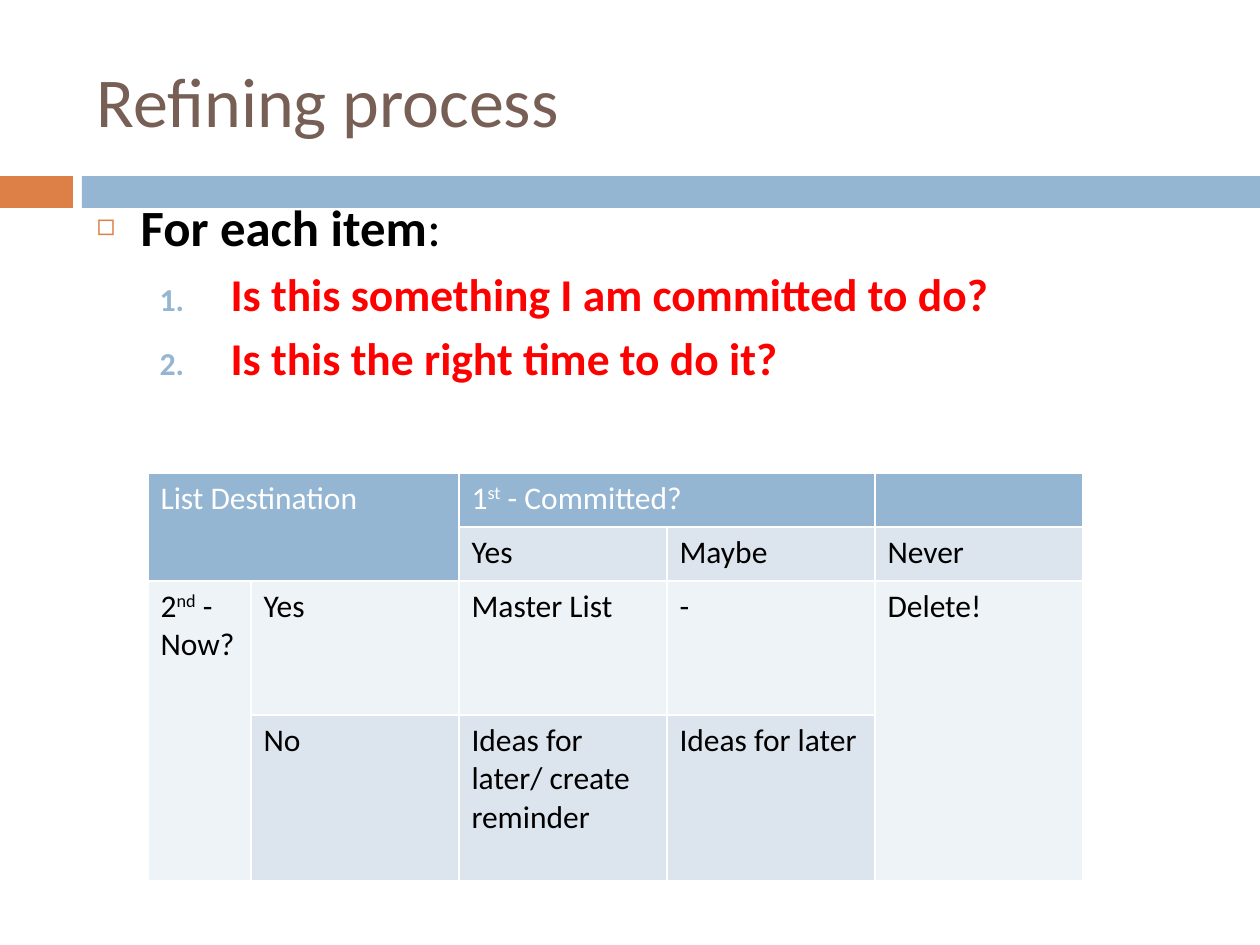
import pptx
import pptx.util
import pptx.dml.color
import pptx.enum.shapes
import pptx.enum.text
import pptx.oxml
import pptx.oxml.ns

Pt = pptx.util.Pt
Color = pptx.dml.color.RGBColor
FONT = "Calibri"
BROWN = Color(0x77, 0x5F, 0x55)
ORANGE = Color(0xDD, 0x80, 0x47)
BLUE = Color(0x94, 0xB6, 0xD2)
DARK = Color(0xDC, 0xE5, 0xEE)
PALE = Color(0xEE, 0xF3, 0xF7)
RED = Color(0xFF, 0, 0)
BLACK = Color(0, 0, 0)
WHITE = Color(0xFF, 0xFF, 0xFF)

TITLE = "Refining process"
LEAD = ("For each item", ":")
ASKS = ["Is this something I am committed to do?",
        "Is this the right time to do it?"]
BARS = [((0, 176, 73, 32), ORANGE), ((82, 176, 1178, 32), BLUE)]

# A cell is a list of runs; a leading ^ raises the run.
CELLS = [
    [["List Destination"], [], ["1", "^st", " - Committed?"], [], []],
    [[], [], ["Yes"], ["Maybe"], ["Never"]],
    [["2", "^nd", " - Now?"], ["Yes"], ["Master List"], ["-"], ["Delete!"]],
    [[], ["No"], ["Ideas for later/ create reminder"], ["Ideas for later"], []],
]
SPANS = [(0, 0, 1, 1), (0, 2, 0, 3), (2, 0, 3, 0), (2, 4, 3, 4)]
FILLS = [BLUE, DARK, PALE, DARK]
COLS = [103] + [208] * 4
ROWS = [54, 54, 134, 166]


def px(n):
    return round(n * 914400 / 126)


def place(shape, *box):
    shape.left, shape.top, shape.width, shape.height = map(px, box)


def style(run, size, color, bold=False):
    font = run.font
    font.name, font.size, font.bold = FONT, Pt(size), bold
    font.color.rgb = color


def node(xml):
    """Parse one element in the a: namespace."""
    tag, rest = xml.split(" ", 1)
    return pptx.oxml.parse_xml(f"<a:{tag} {pptx.oxml.ns.nsdecls('a')} {rest}")


def bullet(para, color, share, mark, left, hang, before):
    para.space_before = Pt(before)
    props = para._p.get_or_add_pPr()
    props.set("marL", str(px(left)))
    props.set("indent", str(-px(hang)))
    for xml in (f'buClr ><a:srgbClr val="{color}"/></a:buClr>',
                f'buSzPct val="{share}000"/>',
                f'buFont typeface="{FONT}"/>', mark):
        props.append(node(xml))


def border(cell):
    props = cell._tc.get_or_add_tcPr()
    for at, side in enumerate(("lnL", "lnR", "lnT", "lnB")):
        props.insert(at, node(f'{side} w="12700"><a:solidFill><a:srgbClr '
                              f'val="{WHITE}"/></a:solidFill></a:{side}>'))


def add_bars(slide):
    for box, color in BARS:
        bar = slide.shapes.add_shape(
            pptx.enum.shapes.MSO_SHAPE.RECTANGLE, *map(px, box))
        bar.shadow.inherit = False
        bar.fill.solid()
        bar.fill.fore_color.rgb = color
        bar.line.fill.background()


def add_text(slide):
    title, body = slide.placeholders
    for shape in (title, body):
        slide.shapes._spTree.append(shape._element)  # in front of the bars
    place(title, 84, 32, 1124, 136)
    place(body, 84, 189, 1134, 624)

    title.text_frame.text = TITLE
    title.text_frame.vertical_anchor = pptx.enum.text.MSO_ANCHOR.MIDDLE
    para = title.text_frame.paragraphs[0]
    para.alignment = pptx.enum.text.PP_ALIGN.LEFT
    style(para.runs[0], 40, BROWN)

    frame = body.text_frame
    frame.auto_size = pptx.enum.text.MSO_AUTO_SIZE.NONE
    para = frame.paragraphs[0]
    for part, bold in zip(LEAD, (True, False)):
        run = para.add_run()
        run.text = part
        style(run, 29, BLACK, bold)
    bullet(para, ORANGE, 60, 'buChar char="◻"/>', 44, 44, 7)
    for ask in ASKS:
        para = frame.add_paragraph()
        para.text = ask
        para.level = 1
        style(para.runs[0], 26, RED, True)
        bullet(para, BLUE, 70, 'buAutoNum type="arabicPeriod"/>', 134, 71, 5.5)


def add_grid(slide):
    table = slide.shapes.add_table(
        len(ROWS), len(COLS), px(148), px(473),
        px(sum(COLS)), px(sum(ROWS))).table
    table.first_row = table.horz_banding = False
    for col, wide in zip(table.columns, COLS):
        col.width = px(wide)
    for row, high in zip(table.rows, ROWS):
        row.height = px(high)
    for r, line in enumerate(CELLS):
        for c, parts in enumerate(line):
            cell = table.cell(r, c)
            cell.fill.solid()
            cell.fill.fore_color.rgb = FILLS[r]
            border(cell)
            for part in parts:
                run = cell.text_frame.paragraphs[0].add_run()
                run.text = part.lstrip("^")
                style(run, 18, WHITE if r == 0 else BLACK)
                if part.startswith("^"):
                    run._r.get_or_add_rPr().set("baseline", "30000")
    for top, left, low, right in SPANS:
        table.cell(top, left).merge(table.cell(low, right))


def main():
    deck = pptx.Presentation()
    deck.slide_width, deck.slide_height = px(1260), px(945)
    slide = deck.slides.add_slide(deck.slide_layouts[1])
    add_bars(slide)
    add_text(slide)
    add_grid(slide)
    deck.save("out.pptx")


if __name__ == "__main__":
    main()
